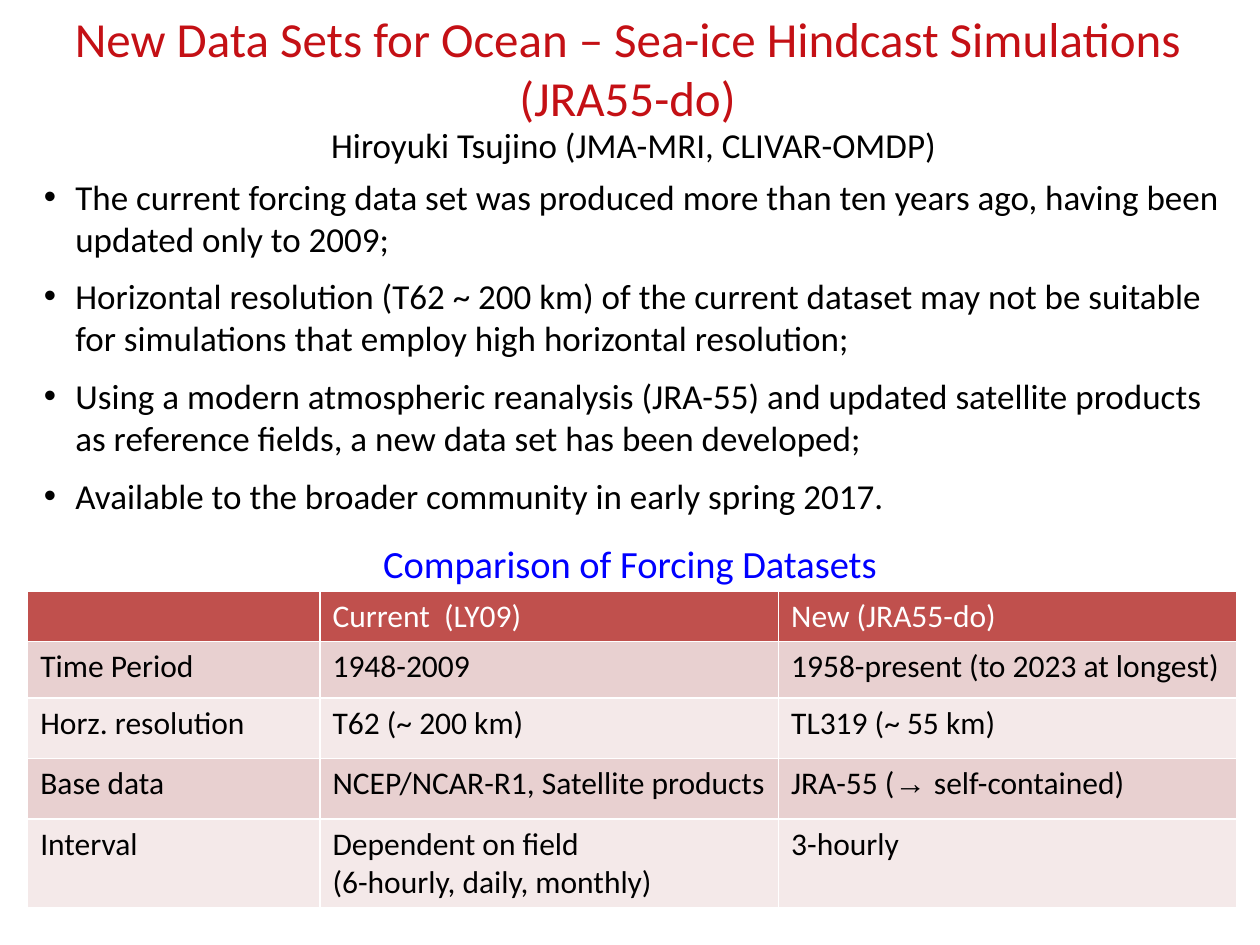
from lxml import etree
from pptx import Presentation
from pptx.dml.color import RGBColor
from pptx.enum import shapes, text
from pptx.oxml import ns
from pptx.util import Inches, Pt

RED = RGBColor(0xC4, 0x10, 0x15)
BLUE = RGBColor(0, 0, 0xFF)
BLACK = RGBColor(0, 0, 0)
WHITE = RGBColor(0xFF, 0xFF, 0xFF)
HEADER_FILL = RGBColor(0xC0, 0x50, 0x4D)
BAND_FILLS = [RGBColor(0xE8, 0xD0, 0xD0), RGBColor(0xF4, 0xE9, 0xE9)]

HEADINGS = [
    ("New Data Sets for Ocean – Sea-ice Hindcast Simulations (JRA55-do)",
     (0.12, 0.02, 9.72, 1.04), 28, RED),
    ("Hiroyuki Tsujino (JMA-MRI, CLIVAR-OMDP)", (1.02, 0.93, 8.02, 0.44), 20, BLACK),
    ("Comparison of Forcing Datasets", (1.26, 4.24, 7.48, 0.47), 22, BLUE),
]
POINTS = [
    "The current forcing data set was produced more than ten years ago, "
    "having been updated only to 2009;",
    "Horizontal resolution (T62 ~ 200 km) of the current dataset may not be "
    "suitable for simulations that employ high horizontal resolution;",
    "Using a modern atmospheric reanalysis (JRA-55) and updated satellite "
    "products as reference fields, a new data set has been developed;",
    "Available to the broader community in early spring 2017.",
]
COMPARISON = [
    ["", "Current  (LY09)", "New (JRA55-do)"],
    ["Time Period", "1948-2009", "1958-present (to 2023 at longest)"],
    ["Horz. resolution", "T62 (~ 200 km)", "TL319 (~ 55 km)"],
    ["Base data", "NCEP/NCAR-R1, Satellite products", "JRA-55 (→ self-contained)"],
    ["Interval", "Dependent on field\n(6-hourly, daily, monthly)", "3-hourly"],
]
COLUMN_WIDTHS = [2.32, 3.64, 3.64]
ROW_HEIGHTS = [0.28, 0.45, 0.48, 0.48, 0.38]
ARROW = "→ "


def style(font, size, color, name="Calibri"):
    formats = {"name": name, "size": Pt(size), "bold": False}
    for key, value in formats.items():
        setattr(font, key, value)
    font.color.rgb = color


def add_run(paragraph, words, size, color, name="Calibri"):
    run = paragraph.add_run()
    run.text = words
    style(run.font, size, color, name)


def add_heading(slide, words, place, size, color):
    frame = slide.shapes.add_textbox(*map(Inches, place)).text_frame
    frame.word_wrap = True
    paragraph = frame.paragraphs[0]
    paragraph.alignment = text.PP_ALIGN.CENTER
    add_run(paragraph, words, size, color)


def add_points(slide):
    panel = slide.shapes.add_shape(
        shapes.MSO_SHAPE.RECTANGLE, *map(Inches, (0.25, 1.34, 9.63, 2.84)))
    panel.shadow.inherit = False
    panel.fill.solid()
    panel.fill.fore_color.rgb = WHITE
    panel.line.fill.background()
    frame = panel.text_frame
    frame.word_wrap = True
    frame.vertical_anchor = text.MSO_ANCHOR.TOP
    for index, point in enumerate(POINTS):
        paragraph = frame.paragraphs[0] if index == 0 else frame.add_paragraph()
        paragraph.alignment = text.PP_ALIGN.LEFT
        paragraph.space_after = Pt(9)
        properties = paragraph._p.get_or_add_pPr()
        properties.set("marL", str(Inches(0.25)))
        properties.set("indent", str(-Inches(0.25)))
        etree.SubElement(properties, ns.qn("a:buFont")).set("typeface", "Arial")
        etree.SubElement(properties, ns.qn("a:buChar")).set("char", "•")
        add_run(paragraph, point, 20, BLACK)


def fill_cell(cell, words, fill, color):
    cell.fill.solid()
    cell.fill.fore_color.rgb = fill
    cell.text = words
    for paragraph in cell.text_frame.paragraphs:
        style(paragraph.font, 18, color)
        before, arrow, after = paragraph.text.partition(ARROW)
        paragraph.clear()
        for part in filter(None, (before, arrow, after)):
            name = "Times New Roman" if part == ARROW else "Calibri"
            add_run(paragraph, part, 18, color, name)


def add_comparison(slide):
    table = slide.shapes.add_table(
        len(COMPARISON), len(COLUMN_WIDTHS), Inches(0.22), Inches(4.69),
        Inches(sum(COLUMN_WIDTHS)), Inches(sum(ROW_HEIGHTS))).table
    for column, width in zip(table.columns, COLUMN_WIDTHS):
        column.width = Inches(width)
    for index, (row, height) in enumerate(zip(table.rows, ROW_HEIGHTS)):
        row.height = Inches(height)
        fill = BAND_FILLS[(index - 1) % 2] if index else HEADER_FILL
        color = BLACK if index else WHITE
        for cell, words in zip(row.cells, COMPARISON[index]):
            fill_cell(cell, words, fill, color)


def main():
    deck = Presentation()
    deck.slide_width, deck.slide_height = Inches(10), Inches(7.5)
    slide = deck.slides.add_slide(deck.slide_layouts[6])
    title, author, caption = HEADINGS
    add_heading(slide, *title)
    add_heading(slide, *author)
    add_points(slide)
    add_comparison(slide)
    add_heading(slide, *caption)
    deck.save("out.pptx")


if __name__ == "__main__":
    main()
